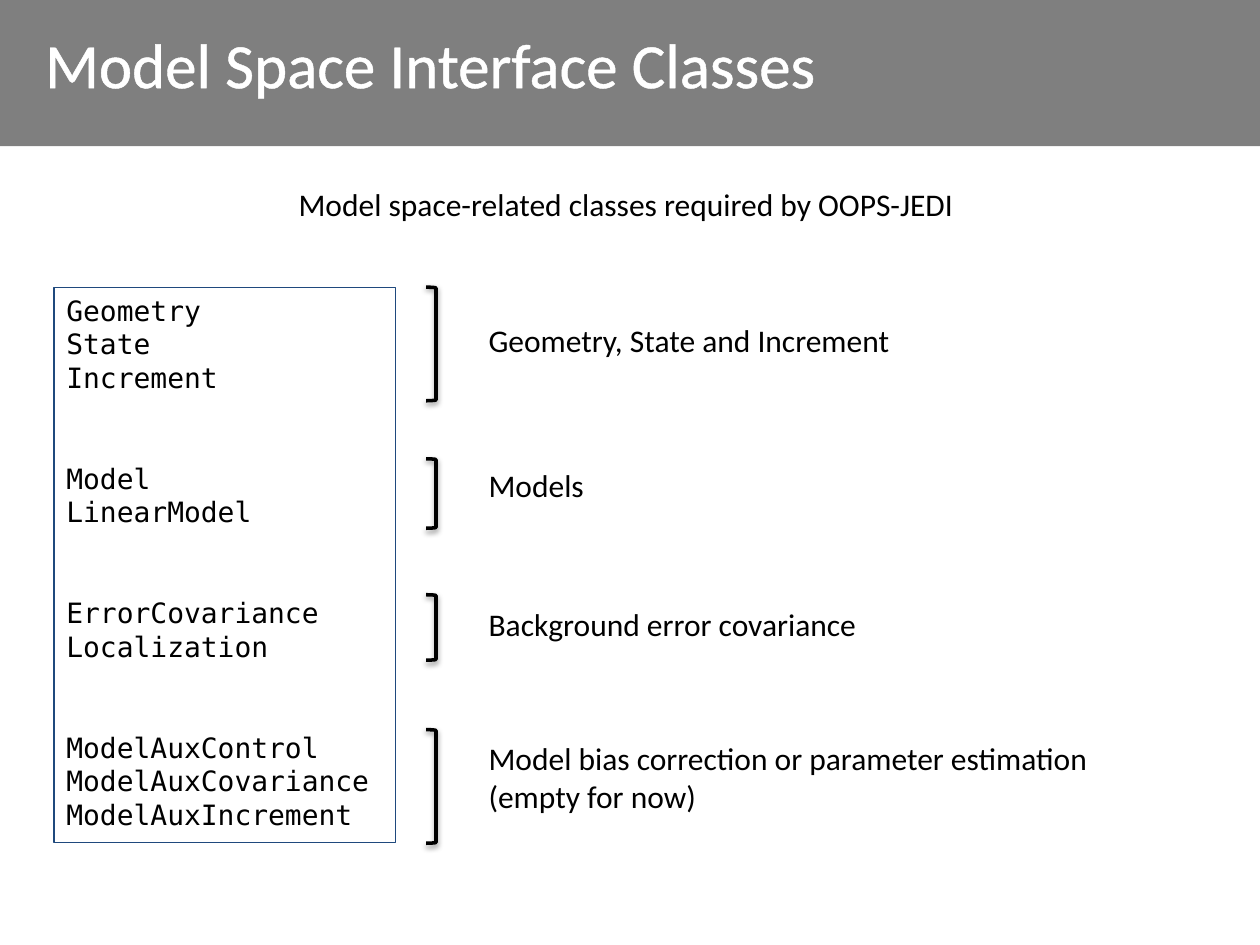
from dataclasses import dataclass

from lxml.etree import SubElement
from pptx import Presentation
from pptx.dml.color import RGBColor
from pptx.enum.shapes import MSO_SHAPE as Preset
from pptx.enum.text import MSO_ANCHOR as Anchor, MSO_AUTO_SIZE as AutoSize
from pptx.oxml import parse_xml
from pptx.oxml.ns import nsdecls, qn
from pptx.util import Cm, Pt


@dataclass(frozen=True)
class Theme:
    black: RGBColor = RGBColor(0, 0, 0)
    white: RGBColor = RGBColor(255, 255, 255)
    navy: RGBColor = RGBColor(0x1F, 0x49, 0x7D)
    body_font: str = "Calibri"
    code_font: str = "DejaVu Sans Mono"
    title_size: float = 36
    body_size: float = 18
    code_size: float = 16
    group_gap: float = 38.4


@dataclass(frozen=True)
class Box:
    """Position and size in centimetres."""
    left: float
    top: float
    width: float
    height: float

    def lengths(self):
        return Cm(self.left), Cm(self.top), Cm(self.width), Cm(self.height)


@dataclass(frozen=True)
class ClassGroup:
    classes: tuple[str, ...]
    bracket_top: float
    bracket_height: float
    label: tuple[str, ...]
    label_top: float
    label_width: float


THEME = Theme()
BRACKET_LEFT, BRACKET_WIDTH = 8.59, 0.2
LABEL_LEFT, LABEL_HEIGHT, LABEL_LINE = 9.6, 1.02, 0.78

GROUPS = (
    ClassGroup(("Geometry", "State", "Increment"), 5.79, 2.29,
               ("Geometry, State and Increment",), 6.35, 8.76),
    ClassGroup(("Model", "LinearModel"), 9.25, 1.4,
               ("Models",), 9.27, 2.46),
    ClassGroup(("ErrorCovariance", "Localization"), 11.99, 1.32,
               ("Background error covariance",), 12.07, 8.03),
    ClassGroup(("ModelAuxControl", "ModelAuxCovariance", "ModelAuxIncrement"), 14.71, 2.29,
               ("Model bias correction or parameter estimation", "(empty for now)"),
               14.78, 12.78),
)


def add_line(frame, text: str, size: float, color: RGBColor, font: str, first: bool):
    paragraph = frame.paragraphs[0] if first else frame.add_paragraph()
    run = paragraph.add_run()
    run.text = text
    run.font.size = Pt(size)
    run.font.name = font
    run.font.color.rgb = color
    return paragraph


def add_label(slide, box: Box, lines: tuple[str, ...]) -> None:
    frame = slide.shapes.add_textbox(*box.lengths()).text_frame
    frame.word_wrap = False
    frame.auto_size = AutoSize.SHAPE_TO_FIT_TEXT
    for index, line in enumerate(lines):
        add_line(frame, line, THEME.body_size, THEME.black, THEME.body_font, index == 0)


def add_header(slide) -> None:
    band = slide.shapes.add_shape(Preset.RECTANGLE, *Box(0, 0, 25.4, 2.95).lengths())
    band.shadow.inherit = False
    band.fill.solid()
    band.fill.fore_color.rgb = THEME.black
    color = band.fill._xPr.find(qn("a:solidFill"))[0]
    SubElement(color, qn("a:alpha"), val="50000")
    band.line.fill.background()

    frame = slide.shapes.add_textbox(*Box(0.66, 0, 21.11, 2.54).lengths()).text_frame
    frame.word_wrap = True
    frame.vertical_anchor = Anchor.MIDDLE
    paragraph = add_line(frame, "Model Space Interface Classes", THEME.title_size,
                         THEME.white, THEME.body_font, True)
    # Thin outline around the title letters
    paragraph.runs[0].font._element.insert(0, parse_xml(
        f'<a:ln {nsdecls("a")} w="{Pt(1.45)}"><a:solidFill>'
        f'<a:srgbClr val="{THEME.white}"/></a:solidFill></a:ln>'))


def add_class_list(slide, box: Box) -> None:
    shape = slide.shapes.add_textbox(*box.lengths())
    shape.line.color.rgb = THEME.navy
    shape.line.width = Pt(0.75)
    frame = shape.text_frame
    frame.word_wrap = True
    frame.auto_size = AutoSize.SHAPE_TO_FIT_TEXT
    for group_index, group in enumerate(GROUPS):
        for index, name in enumerate(group.classes):
            first = group_index == index == 0
            paragraph = add_line(frame, name, THEME.code_size, THEME.black,
                                 THEME.code_font, first)
            if index == 0 and not first:
                paragraph.space_before = Pt(THEME.group_gap)


def add_bracket(slide, box: Box) -> None:
    bracket = slide.shapes.add_shape(Preset.RIGHT_BRACKET, *box.lengths())
    bracket.fill.background()
    bracket.line.color.rgb = THEME.black
    bracket.line.width = Pt(2)
    # Soft shadow straight below
    bracket.shadow.inherit = False
    effects = bracket._element.spPr.find(qn("a:effectLst"))
    effects.append(parse_xml(
        f'<a:outerShdw {nsdecls("a")} blurRad="{Pt(3.1)}" dist="{Pt(1.6)}" dir="5400000" '
        f'rotWithShape="0"><a:srgbClr val="{THEME.black}"><a:alpha val="38000"/>'
        '</a:srgbClr></a:outerShdw>'))


def main() -> None:
    presentation = Presentation()
    presentation.slide_width, presentation.slide_height = Cm(25.4), Cm(19.05)
    slide = presentation.slides.add_slide(presentation.slide_layouts[6])

    # Header and introduction
    add_header(slide)
    add_label(slide, Box(5.77, 3.61, 13.89, LABEL_HEIGHT),
              ("Model space-related classes required by OOPS-JEDI",))

    # Class names, with a bracket and a label for each group
    add_class_list(slide, Box(1.09, 5.79, 6.88, 11.2))
    for group in GROUPS:
        add_bracket(slide, Box(BRACKET_LEFT, group.bracket_top,
                               BRACKET_WIDTH, group.bracket_height))
        height = LABEL_HEIGHT + LABEL_LINE * (len(group.label) - 1)
        add_label(slide, Box(LABEL_LEFT, group.label_top, group.label_width, height),
                  group.label)

    presentation.save("out.pptx")


if __name__ == "__main__":
    main()
